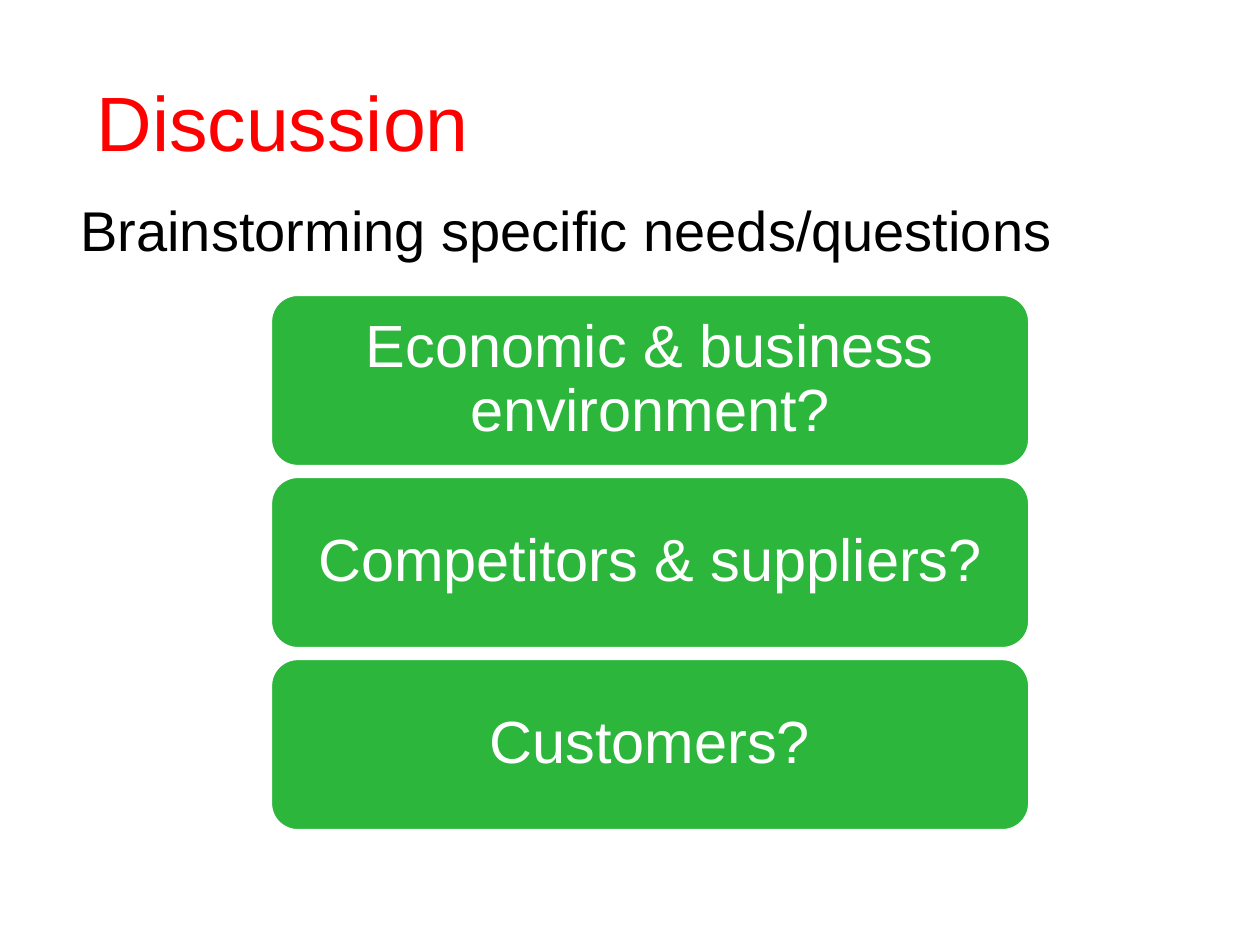
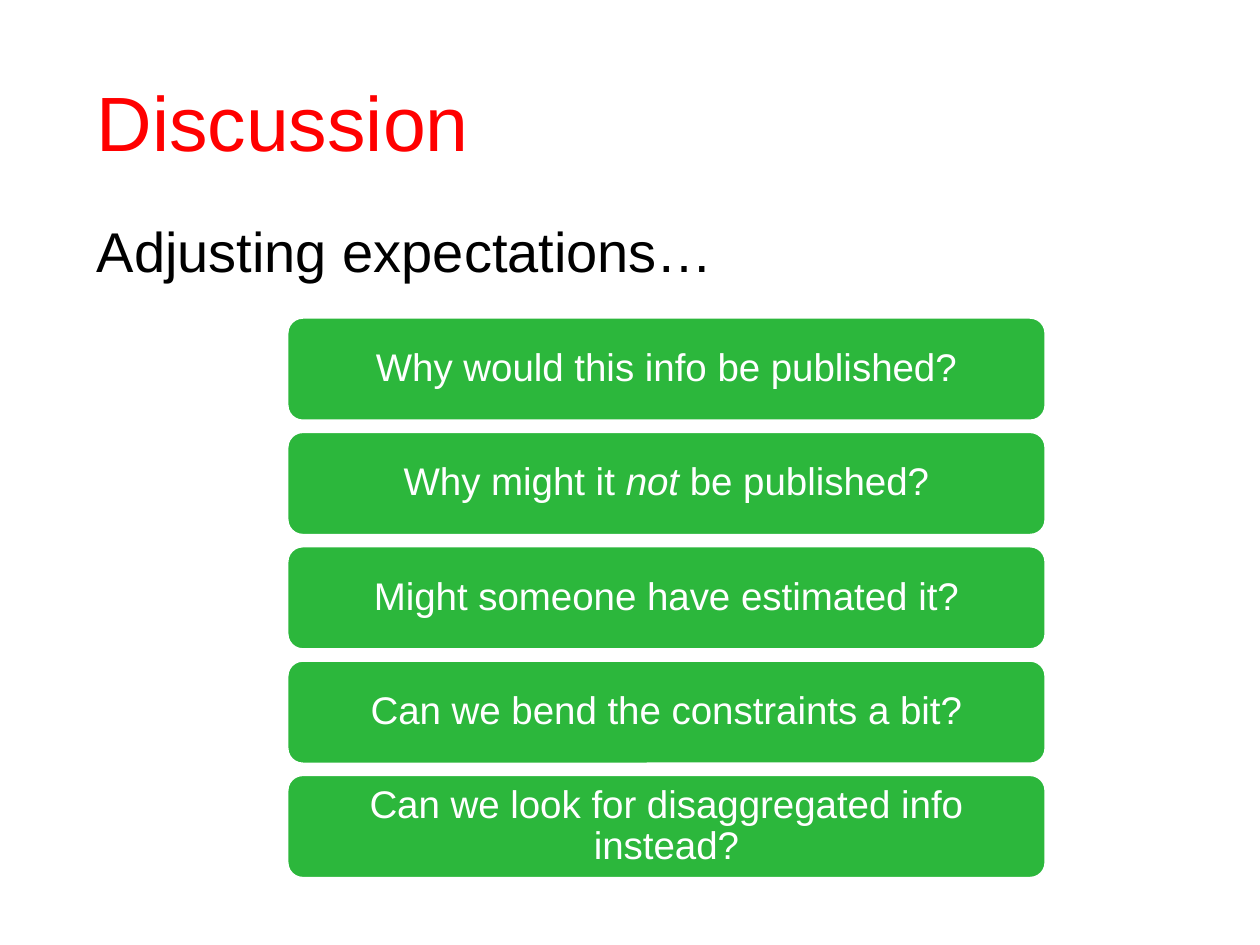
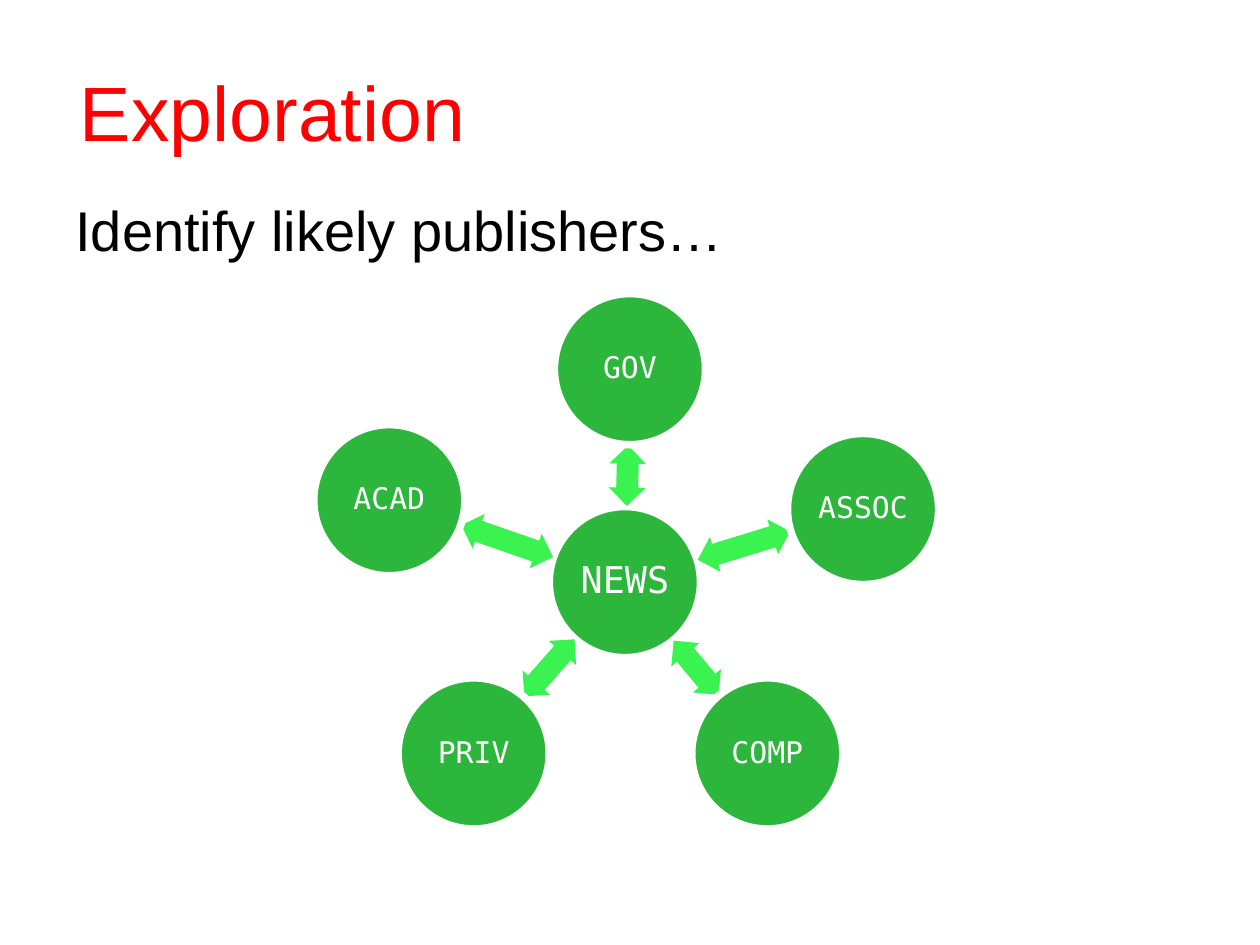
import math
from dataclasses import dataclass

from pptx import Presentation
from pptx import util as u
from pptx.dml.color import RGBColor
from pptx.enum import shapes, text


@dataclass(frozen=True)
class Theme:
    red: str = "FF0000"
    black: str = "000000"
    white: str = "FFFFFF"
    green: str = "2CB73C"
    bright_green: str = "3AF250"
    sans: str = "Arial"
    mono: str = "DejaVu Sans Mono"
    title_size: int = 44
    subtitle_size: int = 32
    hub_size: int = 21
    node_size: int = 17
    outline: float = 4.33


THEME = Theme()
TITLE_SIZE = (5.33, 1.25)
SUBTITLE_SIZE = (8.75, 0.64)
NODE_DIAMETER = 1.2
ARROW_HEIGHT = 0.29
ARROW_CLEARANCE = 0.01


def inches(box):
    return [u.Inches(value) for value in box]


def apply_format(target, values):
    for name, value in values.items():
        setattr(target, name, value)


def write_text(shape, runs, size, color, font=THEME.sans, margins=(0.1, 0.05),
               anchor=text.MSO_ANCHOR.MIDDLE, **paragraph_format):
    """Write one paragraph; runs is a list of (words, italic) pairs."""
    horizontal, vertical = inches(margins)
    frame = shape.text_frame
    apply_format(frame, {
        "word_wrap": True, "vertical_anchor": anchor,
        "margin_left": horizontal, "margin_right": horizontal,
        "margin_top": vertical, "margin_bottom": vertical,
    })
    paragraph = frame.paragraphs[0]
    apply_format(paragraph, paragraph_format)
    for words, italic in runs:
        run = paragraph.add_run()
        run.text = words
        apply_format(run.font, {"name": font, "size": u.Pt(size), "italic": italic})
        run.font.color.rgb = RGBColor.from_string(color)


def add_filled(slide, kind, box, fill, outlined=True):
    shape = slide.shapes.add_shape(kind, *inches(box))
    shape.shadow.inherit = False
    shape.fill.solid()
    shape.fill.fore_color.rgb = RGBColor.from_string(fill)
    if outlined:
        shape.line.color.rgb = RGBColor.from_string(THEME.white)
        shape.line.width = u.Pt(THEME.outline)
    else:
        shape.line.fill.background()
    return shape


def add_heading(presentation, title, title_at, subtitle, subtitle_at):
    """Start a slide with its red title and black subtitle."""
    slide = presentation.slides.add_slide(presentation.slide_layouts[6])
    title_box = slide.shapes.add_textbox(*inches(title_at + TITLE_SIZE))
    write_text(title_box, [(title, False)], THEME.title_size, THEME.red,
               alignment=text.PP_ALIGN.CENTER)
    subtitle_box = slide.shapes.add_textbox(*inches(subtitle_at + SUBTITLE_SIZE))
    write_text(subtitle_box, [(subtitle, False)], THEME.subtitle_size, THEME.black,
               anchor=text.MSO_ANCHOR.TOP, space_before=u.Pt(4))
    return slide


def add_question_stack(slide, box, questions, bar_height, size, margins):
    """Spread rounded bars evenly from the top to the bottom of the box."""
    left, top, width, height = box
    pitch = (height - bar_height) / (len(questions) - 1)
    for index, runs in enumerate(questions):
        bar = add_filled(slide, shapes.MSO_SHAPE.ROUNDED_RECTANGLE,
                         (left, top + index * pitch, width, bar_height), THEME.green)
        write_text(bar, runs, size, THEME.white, margins=margins,
                   alignment=text.PP_ALIGN.CENTER, line_spacing=0.9)


def add_node(slide, center, label, size):
    x, y = center
    radius = NODE_DIAMETER / 2
    node = add_filled(slide, shapes.MSO_SHAPE.OVAL,
                      (x - radius, y - radius, NODE_DIAMETER, NODE_DIAMETER), THEME.green)
    write_text(node, [(label, False)], size, THEME.white, THEME.mono, (0.02, 0.02),
               alignment=text.PP_ALIGN.CENTER, line_spacing=0.9)


def add_double_arrow(slide, start, end):
    """Fill the gap between two nodes with a two-headed block arrow."""
    length = math.dist(start, end) - NODE_DIAMETER - ARROW_CLEARANCE
    x, y = ((a + b) / 2 for a, b in zip(start, end))
    arrow = add_filled(slide, shapes.MSO_SHAPE.LEFT_RIGHT_ARROW,
                       (x - length / 2, y - ARROW_HEIGHT / 2, length, ARROW_HEIGHT),
                       THEME.bright_green, outlined=False)
    arrow.adjustments[0] = 0.6
    arrow.rotation = math.degrees(math.atan2(end[1] - start[1], end[0] - start[0])) % 360


def add_publisher_wheel(slide, hub, hub_label, publishers):
    """Place publishers by their offsets from the hub."""
    add_node(slide, hub, hub_label, THEME.hub_size)
    for label, (dx, dy) in publishers.items():
        center = (hub[0] + dx, hub[1] + dy)
        add_double_arrow(slide, hub, center)
        add_node(slide, center, label, THEME.node_size)


def main():
    presentation = Presentation()
    presentation.slide_width, presentation.slide_height = inches((10, 7.5))

    # Specific needs
    slide = add_heading(presentation, "Discussion", (-0.42, 0.33),
                        "Brainstorming specific needs/questions", (0.54, 1.5))
    add_question_stack(slide, (2.13, 2.32, 6.06, 4.29), [
        [("Economic & business environment?", False)],
        [("Competitors & suppliers?", False)],
        [("Customers?", False)],
    ], bar_height=1.4, size=34, margins=(0.14, 0.07))

    # Expectations
    slide = add_heading(presentation, "Discussion", (-0.42, 0.33),
                        "Adjusting expectations…", (0.67, 1.67))
    add_question_stack(slide, (2.26, 2.5, 6.06, 4.49), [
        [("Why would this info be published?", False)],
        [("Why might it ", False), ("not", True), (" be published?", False)],
        [("Might someone have estimated it?", False)],
        [("Can we bend the constraints a bit?", False)],
        [("Can we look for disaggregated info instead?", False)],
    ], bar_height=0.86, size=22, margins=(0.09, 0.05))

    # Publishers
    slide = add_heading(presentation, "Exploration", (-0.5, 0.25),
                        "Identify likely publishers…", (0.5, 1.5))
    add_publisher_wheel(slide, (4.96, 4.62), "NEWS", {
        "GOV": (0.04, -1.69),
        "ASSOC": (1.89, -0.58),
        "COMP": (1.13, 1.36),
        "PRIV": (-1.2, 1.36),
        "ACAD": (-1.87, -0.65),
    })

    presentation.save("out.pptx")


if __name__ == "__main__":
    main()
